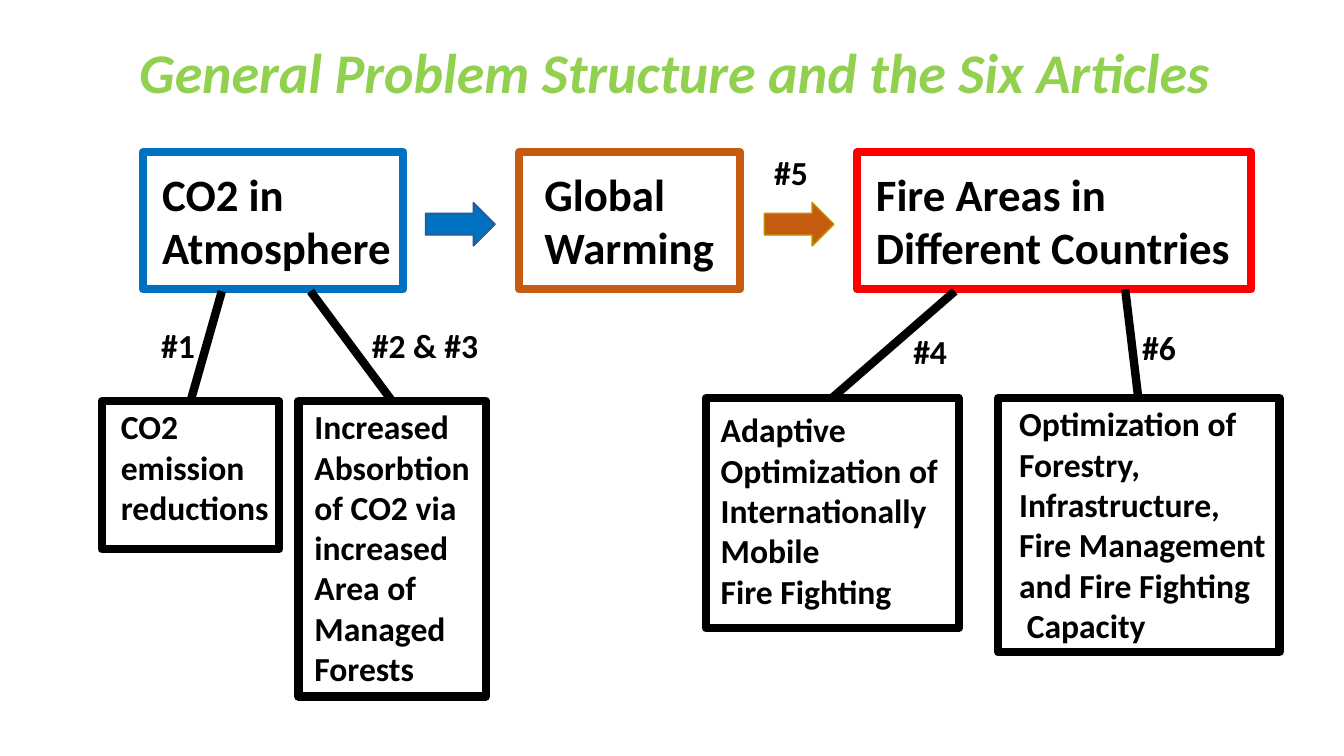
from lxml import etree
from pptx import Presentation
from pptx.dml.color import RGBColor
from pptx.enum import shapes, text
from pptx.oxml import ns
from pptx.util import Inches, Pt

COLORS = {
    "title": "92D050", "ink": "000000", "carbon": "0070C0", "carbon edge": "325491",
    "warming": "C55A11", "warming edge": "BF9000", "fire": "FF0000",
}
FONT = "Calibri"
CAUSE_SIZE, ARTICLE_SIZE = 32, 24
FRAME_WIDTH = 6

TITLE = "General Problem Structure and the Six Articles"
TITLE_PLACE = (1.28, 0.32, 10.94, 0.77)

# Lines, frame place, text place, colour
CAUSES = [
    (["CO2 in", "Atmosphere"], (1.42, 1.51, 2.58, 1.36), (1.51, 1.6, 2.49, 1.18), "carbon"),
    (["Global", "Warming"], (5.15, 1.51, 2.19, 1.36), (5.3, 1.6, 1.9, 1.18), "warming"),
    (["Fire Areas in", "Different Countries"], (8.5, 1.51, 3.91, 1.36),
     (8.59, 1.6, 3.76, 1.18), "fire"),
]

# Lines, frame place, text place, wraps
ARTICLES = [
    (["CO2", "emission", "reductions"],
     (1.01, 3.98, 1.76, 1.47), (1.1, 3.98, 1.76, 1.31), True),
    (["Increased Absorbtion of CO2 via increased Area of Managed Forests"],
     (2.96, 3.98, 1.86, 2.93), (3.02, 3.98, 1.95, 2.93), True),
    (["Adaptive", "Optimization of", "Internationally", "Mobile", "Fire Fighting"],
     (7, 3.95, 2.51, 2.28), (7.05, 4.01, 2.46, 2.12), False),
    (["Optimization of", "Forestry,", "Infrastructure,", "Fire Management",
      "and Fire Fighting", " Capacity"],
     (9.9, 3.95, 2.79, 2.52), (10.01, 3.95, 2.72, 2.52), False),
]

# Start at the article, end at the cause
LINKS = [
    (1.89, 3.98, 2.2, 2.89), (3.89, 3.98, 3.08, 2.89),
    (8.25, 3.95, 9.47, 2.89), (11.29, 3.95, 11.16, 2.87),
]

ARROWS = [(4.22, "carbon"), (7.58, "warming")]
ARROW_TOP, ARROW_WIDTH, ARROW_HEIGHT = 2.01, 0.69, 0.43

NUMBERS = [
    ("#1", 1.5, 3.17), ("#2 & #3", 3.59, 3.17), ("#5", 7.58, 1.46),
    ("#4", 8.96, 3.23), ("#6", 11.23, 3.19),
]
NUMBER_WIDTHS = {"#2 & #3": 1.26}
NUMBER_WIDTH, NUMBER_HEIGHT = 0.54, 0.5


def color(name):
    return RGBColor.from_string(COLORS[name])


def inches(place):
    return [Inches(length) for length in place]


def write(frame, lines, size, ink="ink", wrap=False, italic=None):
    frame.text = "\n".join(lines)
    frame.word_wrap = wrap
    frame.vertical_anchor = text.MSO_ANCHOR.TOP
    for paragraph in frame.paragraphs:
        paragraph.alignment = text.PP_ALIGN.LEFT
        for run in paragraph.runs:
            font = run.font
            font.name, font.size, font.bold, font.italic = FONT, Pt(size), True, italic
            font.color.rgb = color(ink)


def add_label(slide, lines, place, size, wrap=False):
    write(slide.shapes.add_textbox(*inches(place)).text_frame, lines, size, wrap=wrap)


def add_frame(slide, place, edge):
    frame = slide.shapes.add_shape(shapes.MSO_SHAPE.RECTANGLE, *inches(place))
    frame.shadow.inherit = False
    frame.fill.background()
    frame.line.color.rgb = color(edge)
    frame.line.width = Pt(FRAME_WIDTH)


def add_arrow(slide, left, name):
    place = (left, ARROW_TOP, ARROW_WIDTH, ARROW_HEIGHT)
    arrow = slide.shapes.add_shape(shapes.MSO_SHAPE.RIGHT_ARROW, *inches(place))
    arrow.shadow.inherit = False
    arrow.fill.solid()
    arrow.fill.fore_color.rgb = color(name)
    arrow.line.color.rgb = color(name + " edge")
    arrow.line.width = Pt(1)


def add_link(slide, ends):
    link = slide.shapes.add_connector(shapes.MSO_CONNECTOR.STRAIGHT, *inches(ends))
    link.line.color.rgb = color("ink")
    link.line.width = Pt(FRAME_WIDTH)
    etree.SubElement(link._element.spPr, ns.qn("a:effectLst"))


def main():
    deck = Presentation()
    deck.slide_width, deck.slide_height = Inches(13.33), Inches(7.5)
    slide = deck.slides.add_slide(deck.slide_layouts.get_by_name("Title Only"))

    title = slide.shapes.title
    title.left, title.top, title.width, title.height = inches(TITLE_PLACE)
    write(title.text_frame, [TITLE], 40, ink="title", italic=True)

    for lines, frame_place, text_place, edge in CAUSES:
        add_label(slide, lines, text_place, CAUSE_SIZE)
        add_frame(slide, frame_place, edge)
    for left, name in ARROWS:
        add_arrow(slide, left, name)
    for lines, frame_place, text_place, wrap in ARTICLES:
        add_label(slide, lines, text_place, ARTICLE_SIZE, wrap)
        add_frame(slide, frame_place, "ink")
    for ends in LINKS:
        add_link(slide, ends)
    for number, left, top in NUMBERS:
        width = NUMBER_WIDTHS.get(number, NUMBER_WIDTH)
        add_label(slide, [number], (left, top, width, NUMBER_HEIGHT), ARTICLE_SIZE)

    deck.save("out.pptx")


if __name__ == "__main__":
    main()
